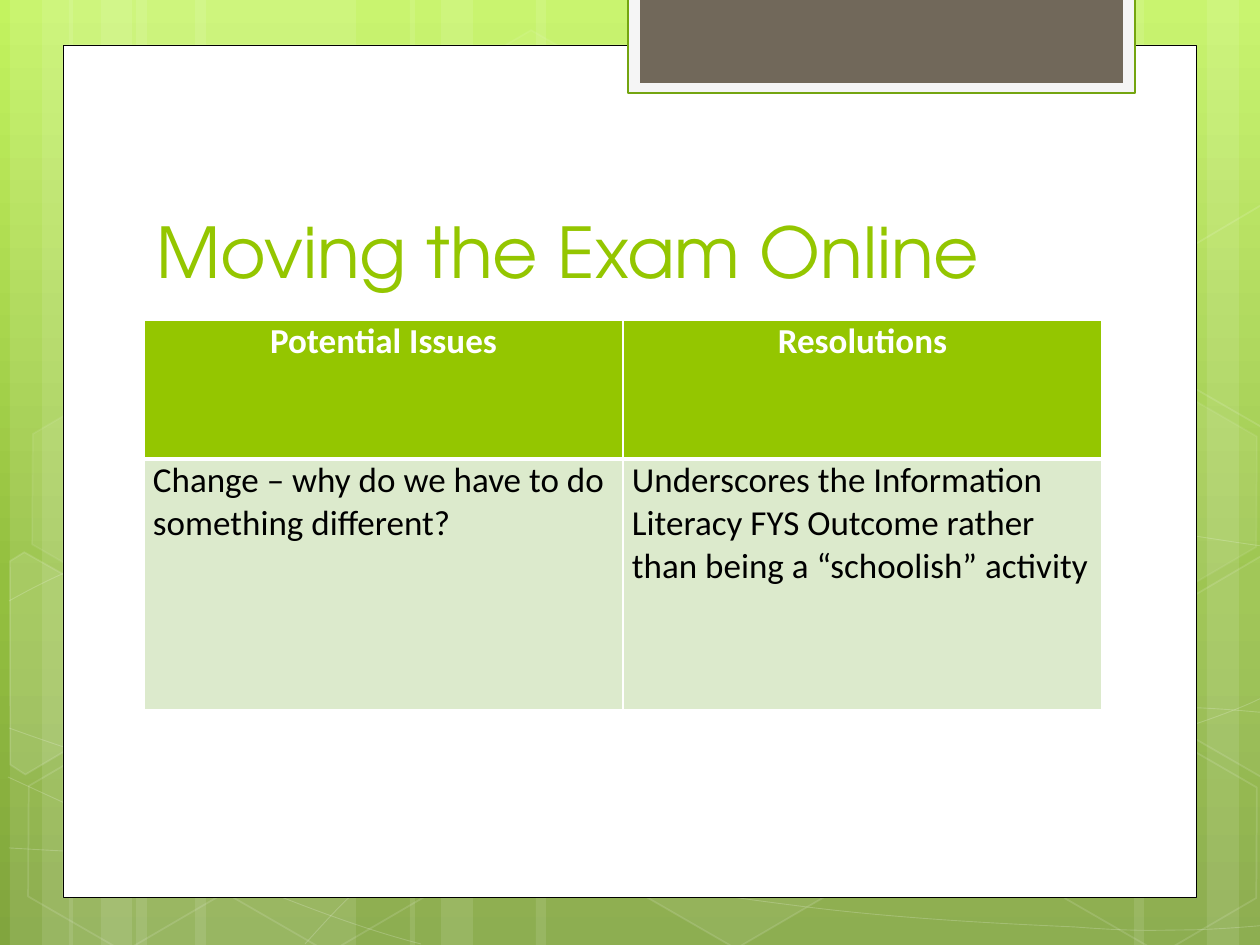
from copy import deepcopy
from math import cos, radians, sin

from lxml.etree import SubElement
from pptx import Presentation
from pptx.dml.color import RGBColor
from pptx.enum.shapes import MSO_SHAPE
from pptx.enum.text import MSO_ANCHOR, PP_ALIGN
from pptx.oxml.ns import qn
from pptx.util import Emu, Pt

SCALE = 914400 / 126  # EMU per px
PAGE_WIDTH, PAGE_HEIGHT = 1260, 945
TILT = 30  # degrees, for every hexagon

WHITE = RGBColor(0xFF, 0xFF, 0xFF)
BLACK = RGBColor(0x00, 0x00, 0x00)
LIME = RGBColor(0x94, 0xC6, 0x00)
PALE_GREEN = RGBColor(0xDC, 0xEA, 0xCC)
TAB_EDGE = RGBColor(0x74, 0xA5, 0x10)
TAB_RIM = RGBColor(0xF5, 0xF5, 0xF5)
TAB_BROWN = RGBColor(0x71, 0x68, 0x5A)
SKY = [(0, RGBColor(0xC3, 0xF3, 0x5F)), (0.62, RGBColor(0x93, 0xBF, 0x3F)),
       (1, RGBColor(0x81, 0xA5, 0x3E))]

TITLE_FONT, TABLE_FONT = "TeX Gyre Adventor", "Calibri"

# Vertical bands: left, width
BANDS = [(136, 220), (10, 63), (42, 105), (195, 220), (69, 63), (101, 105),
         (924, 220), (1207, 63), (1134, 105), (536, 388), (410, 63), (441, 105)]

# Bezier chains: a start point, then two controls and an end point per piece
CURVES = [
    [(9, 848), (77, 852), (145, 856), (239, 854), (334, 853), (451, 851), (577, 838),
     (703, 825), (882, 801), (998, 777), (1113, 753), (1231, 716), (1269, 694)],
    [(9, 601), (45, 581), (82, 562), (152, 543), (224, 524), (326, 496), (437, 488),
     (549, 479), (685, 478), (824, 488), (963, 497), (1193, 537), (1269, 547)],
    [(8, 777), (160, 847), (311, 916), (421, 944)],
    [(9, 728), (48, 742), (88, 756), (161, 776), (234, 795), (344, 827), (450, 848),
     (554, 869), (687, 892), (791, 905), (896, 919), (1008, 924), (1075, 927),
     (1140, 932), (1158, 930), (1191, 930), (1223, 929), (1246, 927), (1269, 925)],
    [(305, 944), (328, 919), (350, 893), (381, 871), (411, 848), (454, 823), (489, 805),
     (524, 787), (546, 780), (592, 767), (638, 755), (722, 737), (766, 728),
     (811, 719), (818, 719), (857, 717), (896, 713), (958, 709), (1000, 708),
     (1045, 707), (1116, 708), (1116, 708), (1144, 708), (1173, 708), (1201, 708),
     (1223, 709), (1245, 711), (1256, 712), (1268, 713), (1264, 712), (1268, 713)],
]

# Hexagons: left, top, fill opacity, line opacity (percent)
HEXAGONS = [(421, 45, 4, 8), (626, 742, 6, 12), (14, 745, 0, 12), (18, 393, 7, 8),
            (219, 746, 0, 12), (949, 571, 10, 12), (1051, 747, 0, 12), (1051, 396, 7, 8)]

# Hexagons cut off by the page edge: centre, corners, fill opacity
CUT_HEXAGONS = [
    ((45, 674), [(10, 561), (24, 552), (121, 607), (120, 718), (25, 774), (10, 765)], 10),
    ((1241, 655), [(1167, 611), (1261, 556), (1271, 562), (1271, 772), (1263, 777),
                   (1167, 722)], 4),
    ((1241, 304), [(1167, 261), (1261, 205), (1273, 212), (1271, 422), (1263, 427),
                   (1167, 372)], 0),
]

TABLE_ROWS = [
    ("Potential Issues", "Resolutions"),
    ("Change – why do we have to do something different?",
     "Underscores the Information Literacy FYS Outcome rather than being a “schoolish” activity"),
]


def px(*lengths):
    return [Emu(round(length * SCALE)) for length in lengths]


def paint(part, color, opacity):
    """Give a fill a solid colour, or none at zero opacity."""
    if not opacity:
        part.background()
        return
    part.solid()
    part.fore_color.rgb = color
    if opacity < 100:
        color_node = part._xPr.find(qn("a:solidFill"))[0]
        SubElement(color_node, qn("a:alpha"), val=str(opacity * 1000))


def style(shape, fill=WHITE, opacity=100, line=WHITE, line_opacity=0, line_width=1):
    shape.shadow.inherit = False
    paint(shape.fill, fill, opacity)
    paint(shape.line.fill, line, line_opacity)
    if line_opacity:
        shape.line.width = Pt(line_width)


def add_box(page, kind, bounds, **look):
    box = page.shapes.add_shape(kind, *px(*bounds))
    style(box, **look)
    return box


def add_outline(page, points, closed, **look):
    builder = page.shapes.build_freeform(*points[0], scale=SCALE)
    builder.add_line_segments(points[1:], close=closed)
    outline = builder.convert_to_shape()
    style(outline, **look)
    return outline


def add_curve(page, chain, **look):
    """Draw the chain as an outline, then join each three points into one Bezier piece."""
    outline = add_outline(page, chain, False, **look)
    segments = outline._element.findall(".//" + qn("a:lnTo"))
    for start in range(0, len(segments), 3):
        piece = SubElement(segments[start].getparent(), qn("a:cubicBezTo"))
        for segment in segments[start:start + 3]:
            piece.append(segment[0])
            segment.getparent().remove(segment)


def turn_back(point, centre):
    x, y = point[0] - centre[0], point[1] - centre[1]
    cosine, sine = cos(radians(TILT)), sin(radians(TILT))
    return centre[0] + x * cosine + y * sine, centre[1] - x * sine + y * cosine


def set_background(page):
    fill = page.background.fill
    fill.gradient()
    fill.gradient_angle = 270
    stop_list = page._element.find(".//" + qn("a:gsLst"))
    stop_list.append(deepcopy(stop_list[-1]))
    for stop, (position, color) in zip(fill.gradient_stops, SKY):
        stop.position = position
        stop.color.rgb = color


def add_decoration(page):
    for left, width in BANDS:
        add_box(page, MSO_SHAPE.RECTANGLE, (left, 0, width, PAGE_HEIGHT), opacity=10)
    for chain in CURVES:
        add_curve(page, chain, opacity=0, line_opacity=20, line_width=0.5)
    for left, top, opacity, line_opacity in HEXAGONS:
        hexagon = add_box(page, MSO_SHAPE.HEXAGON, (left, top, 220, 192),
                          opacity=opacity, line_opacity=line_opacity)
        hexagon.adjustments[0] = 0.285
        hexagon.rotation = TILT
    for centre, corners, opacity in CUT_HEXAGONS:
        upright = [turn_back(corner, centre) for corner in corners]
        outline = add_outline(page, upright, True, opacity=opacity, line_opacity=12)
        outline.rotation = TILT


def add_panel(page):
    add_box(page, MSO_SHAPE.RECTANGLE, (63, 45, 1134, 853),
            line=BLACK, line_opacity=100, line_width=0.5)
    add_box(page, MSO_SHAPE.RECTANGLE, (628, -2, 507, 95), fill=TAB_RIM,
            line=TAB_EDGE, line_opacity=100, line_width=1.25)
    add_box(page, MSO_SHAPE.RECTANGLE, (640, -2, 483, 85), fill=TAB_BROWN)


def format_text(para, font, size, color, bold=False):
    for span in para.runs:
        span.font.name, span.font.size, span.font.bold = font, Pt(size), bold
        span.font.color.rgb = color


def add_title(page, text):
    frame = page.shapes.add_textbox(*px(144, 141, 968, 158)).text_frame
    frame.word_wrap = True
    frame.vertical_anchor = MSO_ANCHOR.BOTTOM
    frame.text = text
    format_text(frame.paragraphs[0], TITLE_FONT, 40, LIME)


def set_borders(cell, bottom_width):
    properties = cell._tc.get_or_add_tcPr()
    widths = {"a:lnL": 1, "a:lnR": 1, "a:lnT": 1, "a:lnB": bottom_width}
    for index, (tag, width) in enumerate(widths.items()):
        border = SubElement(properties, qn(tag), w=str(Pt(width)))
        SubElement(SubElement(border, qn("a:solidFill")), qn("a:srgbClr"), val=str(WHITE))
        properties.insert(index, border)


def add_issue_table(page):
    table = page.shapes.add_table(2, 2, *px(144, 320, 958, 390)).table
    for row, height in zip(table.rows, px(139, 251)):
        row.height = height
    for row_index, texts in enumerate(TABLE_ROWS):
        header = row_index == 0
        for column_index, text in enumerate(texts):
            cell = table.cell(row_index, column_index)
            cell.margin_left, cell.margin_right, cell.margin_top, cell.margin_bottom = px(9, 9, 0, 0)
            paint(cell.fill, LIME if header else PALE_GREEN, 100)
            set_borders(cell, 3 if header else 1)
            cell.text_frame.text = text
            para = cell.text_frame.paragraphs[0]
            para.alignment = PP_ALIGN.CENTER if header else PP_ALIGN.LEFT
            format_text(para, TABLE_FONT, 20, WHITE if header else BLACK, header)


def main():
    deck = Presentation()
    deck.slide_width, deck.slide_height = px(PAGE_WIDTH, PAGE_HEIGHT)
    page = deck.slides.add_slide(deck.slide_layouts[6])
    set_background(page)
    add_decoration(page)
    add_panel(page)
    add_title(page, "Moving the Exam Online")
    add_issue_table(page)
    deck.save("out.pptx")


if __name__ == "__main__":
    main()
